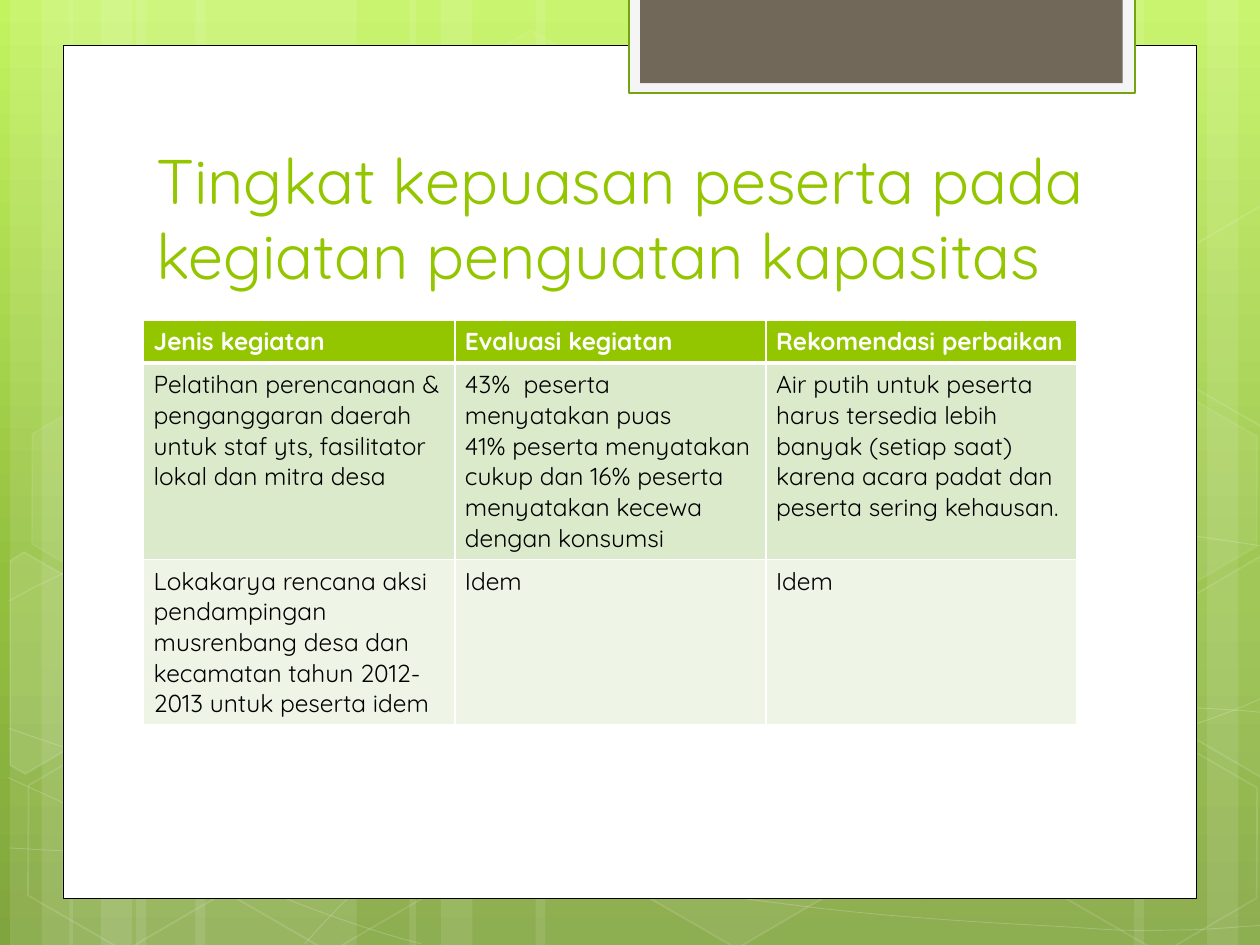
from copy import deepcopy
from math import cos, radians, sin
from lxml.etree import SubElement
from pptx import Presentation
from pptx.dml.color import RGBColor
from pptx.enum.shapes import MSO_SHAPE as Preset
from pptx.enum.text import MSO_ANCHOR as Anchor
from pptx.oxml.ns import qn
from pptx.util import Inches, Pt

THEME = dict(
    font="Quicksand", title_size=36, cell_size=14,
    accent="94C600", white="FFFFFF", black="000000",
    tab_edge="74A510", tab_mat="F5F5F5", tab="71685A",
    row_fills=("94C600", "DCEACC", "EEF5E7"),
    background=((0, "C3F35F"), (0.62, "93BF3F"), (1, "81A53E")),
)
WIDTH, HEIGHT = 10, 7.5

TITLE = "Tingkat kepuasan peserta pada kegiatan penguatan kapasitas"
ROWS = [
    ("Jenis kegiatan", "Evaluasi kegiatan", "Rekomendasi perbaikan"),
    ("Pelatihan perencanaan & penganggaran daerah untuk staf yts, fasilitator lokal dan mitra desa",
     "43%  peserta menyatakan puas\v41% peserta menyatakan cukup dan 16% peserta "
     "menyatakan kecewa dengan konsumsi",
     "Air putih untuk peserta harus tersedia lebih banyak (setiap saat) karena acara padat dan "
     "peserta sering kehausan."),
    ("Lokakarya rencana aksi pendampingan musrenbang desa dan kecamatan tahun 2012-2013 "
     "untuk peserta idem", "Idem", "Idem"),
]
ROW_HEIGHTS = (0.34, 1.56, 1.31)
TABLE_LEFT, TABLE_TOP, TABLE_WIDTH = 1.14, 2.54, 7.41

# Vertical bands: left, width
BANDS = [(1.08, 1.75), (0.08, 0.5), (0.33, 0.83), (1.55, 1.75), (0.55, 0.5), (0.8, 0.83),
         (7.33, 1.75), (9.58, 0.5), (9, 0.83), (4.25, 3.08), (3.25, 0.5), (3.5, 0.83)]
# Bezier waves: a start point, then three points for each curve
WAVES = [
    [(0.07, 6.73), (0.61, 6.76), (1.15, 6.79), (1.9, 6.78), (2.65, 6.77), (3.58, 6.75),
     (4.58, 6.65), (5.58, 6.55), (7, 6.36), (7.92, 6.17), (8.83, 5.98), (9.77, 5.68),
     (10.07, 5.51)],
    [(0.07, 4.77), (0.36, 4.61), (0.65, 4.46), (1.21, 4.31), (1.78, 4.16), (2.59, 3.94),
     (3.47, 3.87), (4.36, 3.8), (5.44, 3.79), (6.54, 3.87), (7.64, 3.95), (9.47, 4.26),
     (10.07, 4.34)],
    [(0.06, 6.17), (1.27, 6.72), (2.47, 7.27), (3.34, 7.49)],
    [(0.07, 5.78), (0.38, 5.89), (0.7, 6), (1.28, 6.16), (1.86, 6.31), (2.73, 6.56),
     (3.57, 6.73), (4.4, 6.9), (5.45, 7.08), (6.28, 7.18), (7.11, 7.29), (8, 7.33),
     (8.53, 7.36), (9.05, 7.4), (9.19, 7.38), (9.45, 7.38), (9.71, 7.37), (9.89, 7.35),
     (10.07, 7.34)],
    [(2.42, 7.49), (2.6, 7.29), (2.78, 7.09), (3.02, 6.91), (3.26, 6.73), (3.6, 6.53),
     (3.88, 6.39), (4.16, 6.25), (4.33, 6.19), (4.7, 6.09), (5.06, 5.99), (5.73, 5.85),
     (6.08, 5.78), (6.44, 5.71), (6.49, 5.71), (6.8, 5.69), (7.11, 5.66), (7.6, 5.63),
     (7.94, 5.62), (8.29, 5.61), (8.86, 5.62), (8.86, 5.62), (9.08, 5.62), (9.31, 5.62),
     (9.53, 5.62), (9.71, 5.63), (9.88, 5.64), (9.97, 5.65), (10.06, 5.66), (10.03, 5.65),
     (10.06, 5.66)],
]
TILT = 30
# Hexagons: left, top, fill opacity, line opacity (percent)
HEXAGONS = [(3.34, 0.36, 4, 8), (4.97, 5.89, 6, 12), (0.11, 5.91, 0, 12), (0.14, 3.12, 7, 8),
            (1.74, 5.92, 0, 12), (7.53, 4.53, 10, 12), (8.34, 5.93, 0, 12), (8.34, 3.14, 7, 8)]
# Hexagons cut by the slide edge: fill opacity, centre, corners as they show after the tilt
CUT_HEXAGONS = [
    (10, (0.36, 5.35),
     [(0.08, 4.45), (0.19, 4.38), (0.96, 4.82), (0.95, 5.7), (0.2, 6.14), (0.08, 6.07)]),
    (4, (9.85, 5.2),
     [(9.26, 4.85), (10.01, 4.41), (10.09, 4.46), (10.09, 6.13), (10.02, 6.17), (9.26, 5.73)]),
    (0, (9.85, 2.41),
     [(9.26, 2.07), (10.01, 1.63), (10.1, 1.68), (10.09, 3.35), (10.02, 3.39), (9.26, 2.95)]),
]


def rgb(name):
    return RGBColor.from_string(THEME.get(name, name))


def set_opacity(shape, where, percent):
    for color in shape._element.spPr.xpath(f"./{where}a:solidFill/a:srgbClr"):
        SubElement(color, qn("a:alpha")).set("val", str(percent * 1000))


def style(shape, fill=None, line=None, width=1, fill_opacity=100, line_opacity=100):
    shape.shadow.inherit = False
    if fill and fill_opacity:
        shape.fill.solid()
        shape.fill.fore_color.rgb = rgb(fill)
        if fill_opacity < 100:
            set_opacity(shape, "", fill_opacity)
    else:
        shape.fill.background()
    if line:
        shape.line.color.rgb = rgb(line)
        shape.line.width = Pt(width)
        if line_opacity < 100:
            set_opacity(shape, "a:ln/", line_opacity)
    else:
        shape.line.fill.background()
    return shape


def add_preset(slide, preset, box, **look):
    return style(slide.shapes.add_shape(preset, *map(Inches, box)), **look)


def add_outline(slide, points, close, **look):
    start, *rest = [(Inches(x), Inches(y)) for x, y in points]
    builder = slide.shapes.build_freeform(*start, scale=1.0)
    builder.add_line_segments(rest, close=close)
    return style(builder.convert_to_shape(), **look)


def bend(shape):
    """Turn every three straight pieces of an open outline into one Bezier curve."""
    for outline in shape._element.spPr.xpath(".//a:pathLst/*"):
        pieces = outline.findall(qn("a:lnTo"))
        for first in range(0, len(pieces), 3):
            curve = SubElement(outline, qn("a:cubicBezTo"))
            for piece in pieces[first:first + 3]:
                curve.append(piece[0])
                outline.remove(piece)


def rotate(point, centre, degrees):
    angle = radians(degrees)
    dx, dy = point[0] - centre[0], point[1] - centre[1]
    return (centre[0] + dx * cos(angle) - dy * sin(angle),
            centre[1] + dx * sin(angle) + dy * cos(angle))


def set_background(slide):
    fill = slide.background.fill
    fill.gradient()
    fill.gradient_angle = 270
    last = fill.gradient_stops[1]._gs
    last.addnext(deepcopy(last))
    for stop, (position, color) in zip(fill.gradient_stops, THEME["background"]):
        stop.position = position
        stop.color.rgb = rgb(color)


def add_decoration(slide):
    for left, width in BANDS:
        add_preset(slide, Preset.RECTANGLE, (left, 0, width, HEIGHT), fill="white", fill_opacity=10)
    for wave in WAVES:
        bend(add_outline(slide, wave, False, line="white", width=0.5, line_opacity=20))
    for left, top, fill_opacity, line_opacity in HEXAGONS:
        hexagon = add_preset(slide, Preset.HEXAGON, (left, top, 1.75, 1.52), fill="white",
                             line="white", fill_opacity=fill_opacity, line_opacity=line_opacity)
        hexagon.adjustments[0] = 0.285
        hexagon.rotation = TILT
    for fill_opacity, centre, corners in CUT_HEXAGONS:
        level = [rotate(corner, centre, -TILT) for corner in corners]
        add_outline(slide, level, True, fill="white", line="white",
                    fill_opacity=fill_opacity, line_opacity=12).rotation = TILT
    add_preset(slide, Preset.RECTANGLE, (0.5, 0.36, 9, 6.77), fill="white", line="black", width=0.5)
    add_preset(slide, Preset.RECTANGLE, (4.99, -0.02, 4.02, 0.76), fill="tab_mat",
               line="tab_edge", width=1.25)
    add_preset(slide, Preset.RECTANGLE, (5.08, -0.02, 3.83, 0.68), fill="tab")


def write(frame, text, size, color, bold=False):
    frame.word_wrap = True
    paragraph = frame.paragraphs[0]
    paragraph.text = text
    font = paragraph.font
    font.name, font.size, font.bold = THEME["font"], Pt(THEME[size]), bold
    font.color.rgb = rgb(color)


def add_title(slide):
    box = slide.shapes.add_textbox(*map(Inches, (1.14, 1.12, 7.68, 1.25)))
    box.text_frame.vertical_anchor = Anchor.BOTTOM
    write(box.text_frame, TITLE, "title_size", "accent")


def add_borders(cell, widths):
    for side, width in widths.items():
        line = SubElement(cell._tc.get_or_add_tcPr(), qn(f"a:ln{side}"), w=str(Pt(width)))
        SubElement(SubElement(line, qn("a:solidFill")), qn("a:srgbClr"), val=THEME["white"])


def add_activity_table(slide):
    box = (TABLE_LEFT, TABLE_TOP, TABLE_WIDTH, sum(ROW_HEIGHTS))
    table = slide.shapes.add_table(len(ROWS), len(ROWS[0]), *map(Inches, box)).table
    for index, texts in enumerate(ROWS):
        table.rows[index].height = Inches(ROW_HEIGHTS[index])
        header = index == 0
        for column, text in enumerate(texts):
            cell = table.cell(index, column)
            cell.margin_left = cell.margin_right = Inches(0.08)
            add_borders(cell, dict(L=1, R=1, T=3 if index == 1 else 1, B=3 if header else 1))
            cell.fill.solid()
            cell.fill.fore_color.rgb = rgb(THEME["row_fills"][index])
            write(cell.text_frame, text, "cell_size", "white" if header else "black", header)


def main():
    presentation = Presentation()
    presentation.slide_width, presentation.slide_height = Inches(WIDTH), Inches(HEIGHT)
    slide = presentation.slides.add_slide(presentation.slide_layouts[6])
    set_background(slide)
    add_decoration(slide)
    add_title(slide)
    add_activity_table(slide)
    presentation.save("out.pptx")


if __name__ == "__main__":
    main()
